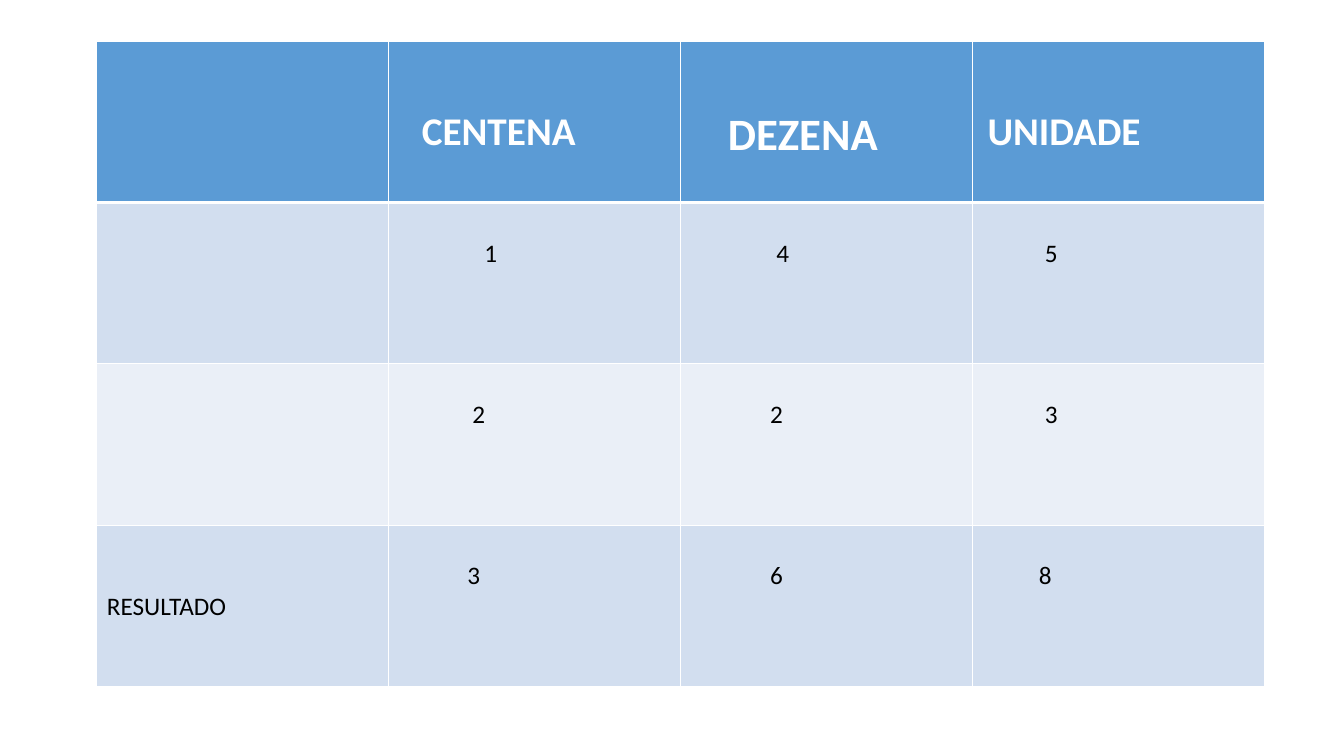
"""Build a slide with a place-value addition table."""
from pptx import Presentation
from pptx.dml.color import RGBColor
from pptx.oxml import parse_xml
from pptx.oxml.ns import nsdecls
from pptx.util import Inches, Pt

# Each cell: text, left indent in inches
ROWS = [
    [("", 0.1), ("CENTENA", 0.33), ("DEZENA", 0.47), ("UNIDADE", 0.15)],
    [("", 0.1), ("1", 0.95), ("4", 0.95), ("5", 0.72)],
    [("", 0.1), ("2", 0.83), ("2", 0.89), ("3", 0.72)],
    [("RESULTADO", 0.1), ("3", 0.78), ("6", 0.89), ("8", 0.66)],
]
THEME = {
    "font": "Calibri",
    "head": "5B9BD5",
    "bands": ["D2DEEF", "EAEFF7"],
    "light": "FFFFFF",
    "dark": "000000",
    "body": 18,
    "title": 28,
    "large": 32,
    "thin": 1,
    "thick": 3,
}
LEFT, TOP, WIDTH, HEIGHT = 0.96, 0.41, 11.58, 6.4
LINE, PAD = 0.305, 0.05


def edge(cell, sides):
    """Draw the cell's borders from a dict of side and width."""
    props = cell._tc.get_or_add_tcPr()
    for spot, (side, width) in enumerate(sides.items()):
        props.insert(spot, parse_xml(
            f'<a:ln{side} {nsdecls("a")} w="{Pt(width)}"><a:solidFill>'
            f'<a:srgbClr val="{THEME["light"]}"/></a:solidFill></a:ln{side}>'))


def style(cell, words, indent, row):
    """Fill one cell and format its text."""
    head = row == 0
    cell.fill.solid()
    cell.fill.fore_color.rgb = RGBColor.from_string(
        THEME["head"] if head else THEME["bands"][(row - 1) % 2])
    thin, thick = THEME["thin"], THEME["thick"]
    edge(cell, {"L": thin, "R": thin,
                "T": thick if row == 1 else thin,
                "B": thick if head else thin})
    drop = 2 if head or words == "RESULTADO" else 1
    cell.margin_left = Inches(indent)
    cell.margin_top = Inches(PAD + drop * LINE)
    cell.text_frame.text = words
    font = cell.text_frame.paragraphs[0].font
    if words:
        font = cell.text_frame.paragraphs[0].runs[0].font
    size = "body" if not head else "large" if words == "DEZENA" else "title"
    font.name = THEME["font"]
    font.size = Pt(THEME[size])
    font.bold = head
    font.color.rgb = RGBColor.from_string(THEME["light" if head else "dark"])


def main():
    """Lay out the table and save the deck."""
    deck = Presentation()
    deck.slide_width, deck.slide_height = Inches(13.33), Inches(7.5)
    slide = deck.slides.add_slide(deck.slide_layouts[6])
    table = slide.shapes.add_table(
        len(ROWS), len(ROWS[0]), Inches(LEFT), Inches(TOP),
        Inches(WIDTH), Inches(HEIGHT)).table
    for row, cells in enumerate(ROWS):
        for col, (words, indent) in enumerate(cells):
            style(table.cell(row, col), words, indent, row)
    deck.save("out.pptx")


if __name__ == "__main__":
    main()
